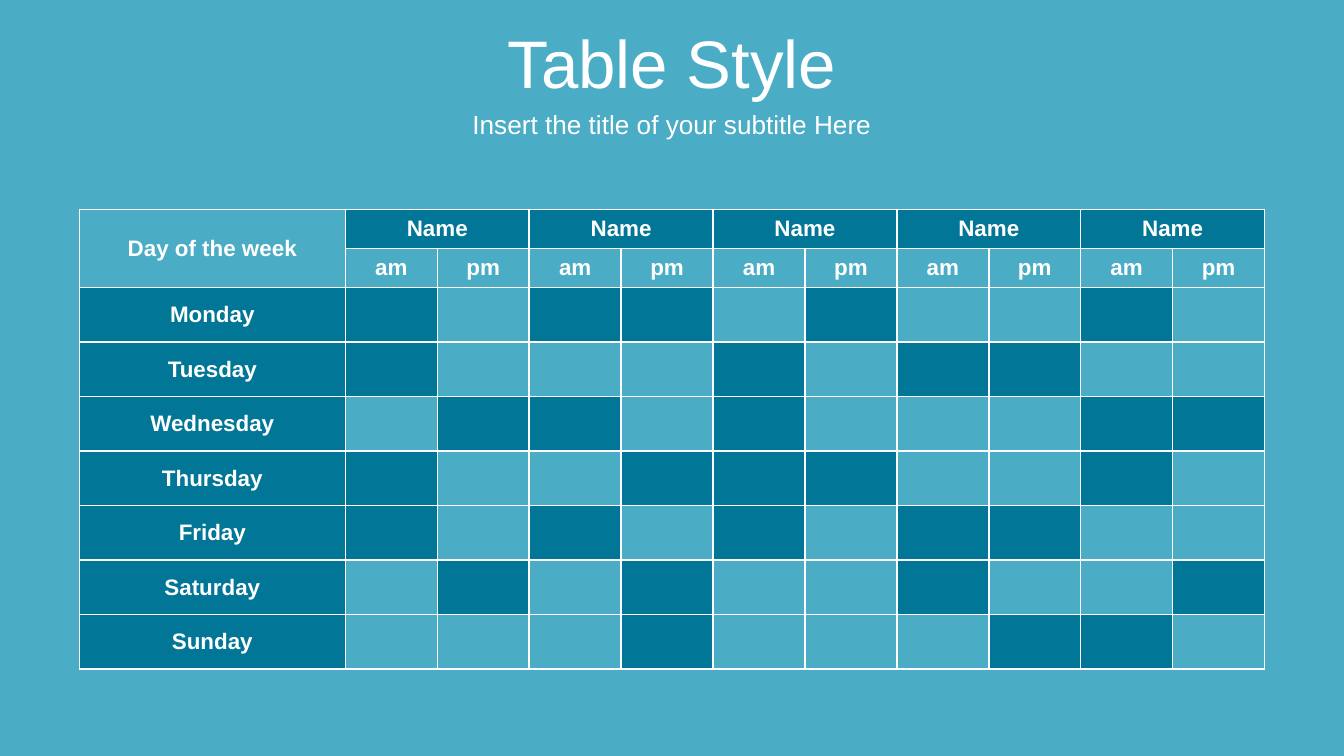
from lxml import etree
from pptx import Presentation
from pptx.dml.color import RGBColor
from pptx.enum import text
from pptx.oxml import ns
from pptx.util import Inches, Pt

FONT = "Arial"
WHITE = "FFFFFF"
LIGHT = "4BACC6"
DARK = "027696"

PEOPLE = 5
HEADER_ROWS = 2
# One mark per half day: "x" is a filled slot.
SCHEDULE = {
    "Monday": "x.xx.x..x.",
    "Tuesday": "x...x.xx..",
    "Wednesday": ".xx.x...xx",
    "Thursday": "x..xxx..x.",
    "Friday": "x.x.x.xx..",
    "Saturday": ".x.x..x..x",
    "Sunday": "...x...xx.",
}


def color(value):
    return RGBColor.from_string(value)


def write(text_frame, words, size, bold=False):
    text_frame.text = words
    paragraph = text_frame.paragraphs[0]
    paragraph.alignment = text.PP_ALIGN.CENTER
    font = paragraph.runs[0].font
    font.name = FONT
    font.size = Pt(size)
    font.bold = bold
    font.color.rgb = color(WHITE)


def format_heading(shape, words, size, top, height):
    shape.left, shape.top = Inches(0), Inches(top)
    shape.width, shape.height = Inches(10), Inches(height)
    text_frame = shape.text_frame
    text_frame.word_wrap = True
    text_frame.auto_size = text.MSO_AUTO_SIZE.NONE
    text_frame.vertical_anchor = text.MSO_ANCHOR.MIDDLE
    write(text_frame, words, size)


def add_borders(cell):
    properties = cell._tc.get_or_add_tcPr()
    for side in ("lnL", "lnR", "lnT", "lnB"):
        line = etree.SubElement(properties, ns.qn(f"a:{side}"), w=str(Pt(1)))
        fill = etree.SubElement(line, ns.qn("a:solidFill"))
        etree.SubElement(fill, ns.qn("a:srgbClr"), val=WHITE)


def fill_cell(cell, fill, words=""):
    cell.fill.solid()
    cell.fill.fore_color.rgb = color(fill)
    cell.vertical_anchor = text.MSO_ANCHOR.MIDDLE
    if words:
        write(cell.text_frame, words, 12, bold=True)


def add_grid(slide):
    """Add the empty, bordered table."""
    frame = slide.shapes.add_table(
        HEADER_ROWS + len(SCHEDULE), 1 + 2 * PEOPLE,
        Inches(0.59), Inches(1.56), Inches(8.82), Inches(3.42))
    table = frame.table
    table.first_row = table.horz_banding = False
    for index, column in enumerate(table.columns):
        column.width = Inches(6.84 / (2 * PEOPLE)) if index else Inches(1.98)
    for index, row in enumerate(table.rows):
        is_header = index < HEADER_ROWS
        row.height = Inches(0.29) if is_header else Inches(2.84 / len(SCHEDULE))
    for cell in table.iter_cells():
        add_borders(cell)
        cell.fill.background()
    return table


def fill_header(table):
    corner = table.cell(0, 0)
    corner.merge(table.cell(1, 0))
    fill_cell(corner, LIGHT, "Day of the week")
    for column in range(1, 2 * PEOPLE, 2):
        name = table.cell(0, column)
        name.merge(table.cell(0, column + 1))
        fill_cell(name, DARK, "Name")
        fill_cell(table.cell(1, column), LIGHT, "am")
        fill_cell(table.cell(1, column + 1), LIGHT, "pm")


def fill_days(table):
    for row, (day, slots) in enumerate(SCHEDULE.items(), HEADER_ROWS):
        fill_cell(table.cell(row, 0), DARK, day)
        for column, slot in enumerate(slots, 1):
            if slot == "x":
                fill_cell(table.cell(row, column), DARK)


def main():
    presentation = Presentation()
    presentation.slide_width = Inches(10)
    presentation.slide_height = Inches(10 * 9 / 16)
    slide = presentation.slides.add_slide(presentation.slide_layouts[5])
    slide.background.fill.solid()
    slide.background.fill.fore_color.rgb = color(LIGHT)

    format_heading(slide.shapes.title, "Table Style", 36, 0.14, 0.63)
    subtitle = slide.shapes.add_textbox(0, 0, 0, 0)
    format_heading(subtitle, "Insert the title of your subtitle Here", 14, 0.77, 0.31)

    table = add_grid(slide)
    fill_header(table)
    fill_days(table)
    presentation.save("out.pptx")


if __name__ == "__main__":
    main()
